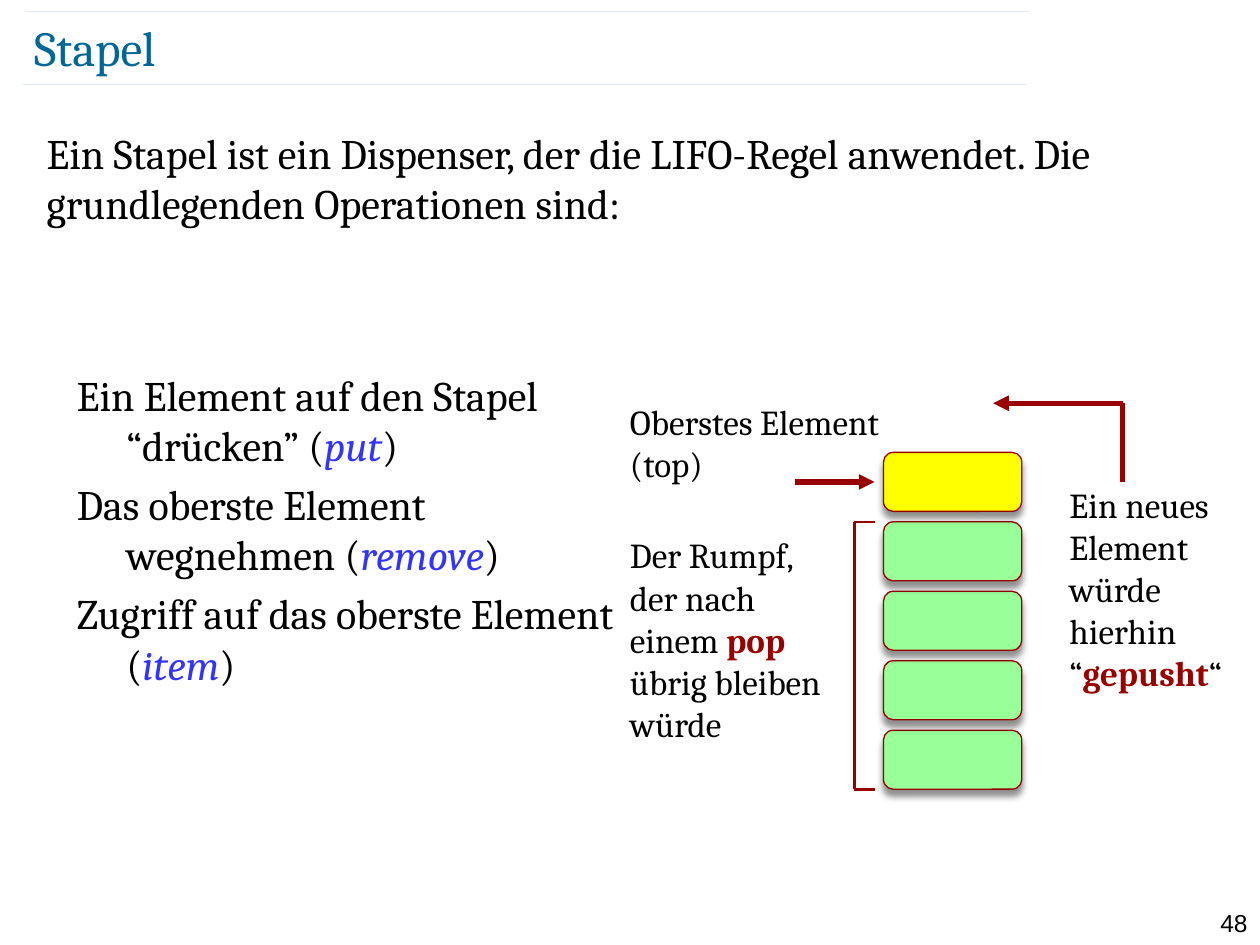
from dataclasses import dataclass

from lxml import etree
from pptx import Presentation
from pptx import util as u
from pptx.dml.color import RGBColor
from pptx.enum import shapes, text
from pptx.oxml.ns import qn

COLORS = {
    "title": "006699",
    "text": "000000",
    "operation": "3333FF",
    "accent": "990000",
    "top": "FFFF00",
    "rest": "99FF99",
}
PLAIN = {"italic": False, "bold": False, "color": "text"}
OPERATION = {"italic": True, "color": "operation"}
KEYWORD = {"bold": True, "color": "accent"}
HANGING = 1.0
BLOCK_LEFT, BLOCK_TOP, BLOCK_WIDTH, BLOCK_HEIGHT = 17.81, 9.12, 2.79, 1.19
BLOCK_PITCH = 1.4
BLOCK_COUNT = 5


@dataclass
class TextBlock:
    left: float
    top: float
    width: float
    height: float
    paragraphs: list  # each paragraph is a list of (wording, format) pairs
    size: int
    font: str = "Cambria"
    align: text.PP_ALIGN = text.PP_ALIGN.LEFT
    anchor: text.MSO_ANCHOR = text.MSO_ANCHOR.TOP
    inset: bool = True
    hanging: bool = False
    grow: bool = False


@dataclass
class Line:
    x1: float
    y1: float
    x2: float
    y2: float
    width: float
    color: str = "accent"
    arrow: bool = False
    opacity: int = 100


def rgb(name: str) -> RGBColor:
    return RGBColor.from_string(COLORS[name])


def draw_text(s, block: TextBlock) -> None:
    sp = s.shapes.add_textbox(*map(u.Cm, (block.left, block.top, block.width, block.height)))
    tf = sp.text_frame
    frame = {"word_wrap": True, "vertical_anchor": block.anchor}
    if not block.inset:
        frame |= {f"margin_{side}": 0 for side in ("left", "top", "right", "bottom")}
    if block.grow:
        frame["auto_size"] = text.MSO_AUTO_SIZE.SHAPE_TO_FIT_TEXT
    for name, value in frame.items():
        setattr(tf, name, value)
    for i, runs in enumerate(block.paragraphs):
        p = tf.add_paragraph() if i else tf.paragraphs[0]
        p.alignment = block.align
        if i:
            p.space_before = u.Pt(block.size * 0.2)
        if block.hanging:
            pPr = p._p.get_or_add_pPr()
            pPr.set("marL", str(u.Cm(HANGING)))
            pPr.set("indent", str(u.Cm(-HANGING)))
        for wording, style in runs:
            r = p.add_run()
            r.text = wording
            values = {**PLAIN, **style, "name": block.font, "size": u.Pt(block.size)}
            r.font.color.rgb = rgb(values.pop("color"))
            for name, value in values.items():
                setattr(r.font, name, value)


def draw_line(s, line: Line) -> None:
    cn = s.shapes.add_connector(
        shapes.MSO_CONNECTOR.STRAIGHT, *map(u.Cm, (line.x1, line.y1, line.x2, line.y2)))
    cn.line.width = u.Pt(line.width)
    cn.line.color.rgb = rgb(line.color)
    ln = cn.line._get_or_add_ln()
    if line.opacity < 100:
        color = ln.find(".//" + qn("a:srgbClr"))
        etree.SubElement(color, qn("a:alpha"), val=str(line.opacity * 1000))
    if line.arrow:
        etree.SubElement(ln, qn("a:tailEnd"), type="triangle")
    etree.SubElement(cn._element.spPr, qn("a:effectLst"))


def draw_block(s, index: int) -> None:
    """Draw one stack element; index 0 is the top of the stack."""
    sp = s.shapes.add_shape(
        shapes.MSO_SHAPE.ROUNDED_RECTANGLE, u.Cm(BLOCK_LEFT),
        u.Cm(BLOCK_TOP + index * BLOCK_PITCH), u.Cm(BLOCK_WIDTH), u.Cm(BLOCK_HEIGHT))
    sp.fill.solid()
    sp.fill.fore_color.rgb = rgb("rest" if index else "top")
    sp.line.color.rgb = rgb("accent")
    sp.line.width = u.Pt(0.75)
    sp.shadow.inherit = False
    effects = sp._element.spPr.find(qn("a:effectLst"))
    shadow = etree.SubElement(
        effects, qn("a:outerShdw"), blurRad=str(u.Pt(4)), dist=str(u.Pt(4)),
        dir="5400000", algn="ctr", rotWithShape="0")
    color = etree.SubElement(shadow, qn("a:srgbClr"), val=COLORS["text"])
    etree.SubElement(color, qn("a:alpha"), val="43000")


TEXTS = [
    TextBlock(24.0, 18.19, 1.4, 0.61, [[("48", {})]], 14, font="Arial",
              align=text.PP_ALIGN.RIGHT),
    TextBlock(0.69, 0.33, 22.07, 1.22, [[("Stapel", {"color": "title"})]], 28,
              anchor=text.MSO_ANCHOR.MIDDLE, inset=False),
    TextBlock(0.69, 2.44, 23.88, 15.67, [[(
        "Ein Stapel ist ein Dispenser, der die LIFO-Regel anwendet. "
        "Die grundlegenden Operationen sind:", {})]], 24),
    TextBlock(1.3, 7.32, 11.4, 10.0, [
        [(lead + " (", {}), (operation, OPERATION), (")", {})]
        for lead, operation in (
            ("Ein Element auf den Stapel “drücken”", "put"),
            ("Das oberste Element wegnehmen", "remove"),
            ("Zugriff auf das oberste Element", "item"),
        )], 24, hanging=True),
    TextBlock(12.45, 7.95, 7.0, 1.96, [[("Oberstes Element (top)", {})]], 20, grow=True),
    TextBlock(21.31, 9.63, 4.22, 4.52, [[
        ("Ein neues Element würde hierhin “", {}), ("gepusht", KEYWORD), ("“", {})]],
        20, grow=True),
    TextBlock(12.45, 10.64, 4.72, 4.52, [[
        ("Der Rumpf, der nach einem ", {}), ("pop", KEYWORD),
        (" übrig bleiben würde", {})]], 20, grow=True),
]

BRACKET_X, BRACKET_END = 17.22, 17.63
REST_TOP = BLOCK_TOP + BLOCK_PITCH
REST_BOTTOM = BLOCK_TOP + (BLOCK_COUNT - 1) * BLOCK_PITCH + BLOCK_HEIGHT
TOP_MIDDLE = BLOCK_TOP + BLOCK_HEIGHT / 2
PUSH_X, PUSH_Y = 22.63, 8.13

TITLE_RULES = [
    Line(x, y, x + 20.24, y, 0.1, "title", opacity=35)
    for x, y in ((0.46, 1.7), (0.51, 0.23))
]
DIAGRAM_LINES = [
    Line(16.03, TOP_MIDDLE, BRACKET_END, TOP_MIDDLE, 3, arrow=True),
    Line(PUSH_X, TOP_MIDDLE, PUSH_X, PUSH_Y, 3),
    Line(PUSH_X, PUSH_Y, 20.02, PUSH_Y, 3, arrow=True),
    Line(BRACKET_X, REST_TOP, BRACKET_X, REST_BOTTOM, 1.5),
    *(Line(BRACKET_X, y, BRACKET_END, y, 1.5) for y in (REST_TOP, REST_BOTTOM)),
]


def main() -> None:
    prs = Presentation()
    prs.slide_width, prs.slide_height = u.Cm(25.4), u.Cm(19.05)
    s = prs.slides.add_slide(prs.slide_layouts[6])
    for line in TITLE_RULES:
        draw_line(s, line)
    for block in TEXTS:
        draw_text(s, block)
    for index in reversed(range(BLOCK_COUNT)):
        draw_block(s, index)
    for line in DIAGRAM_LINES:
        draw_line(s, line)
    prs.save("out.pptx")


if __name__ == "__main__":
    main()
